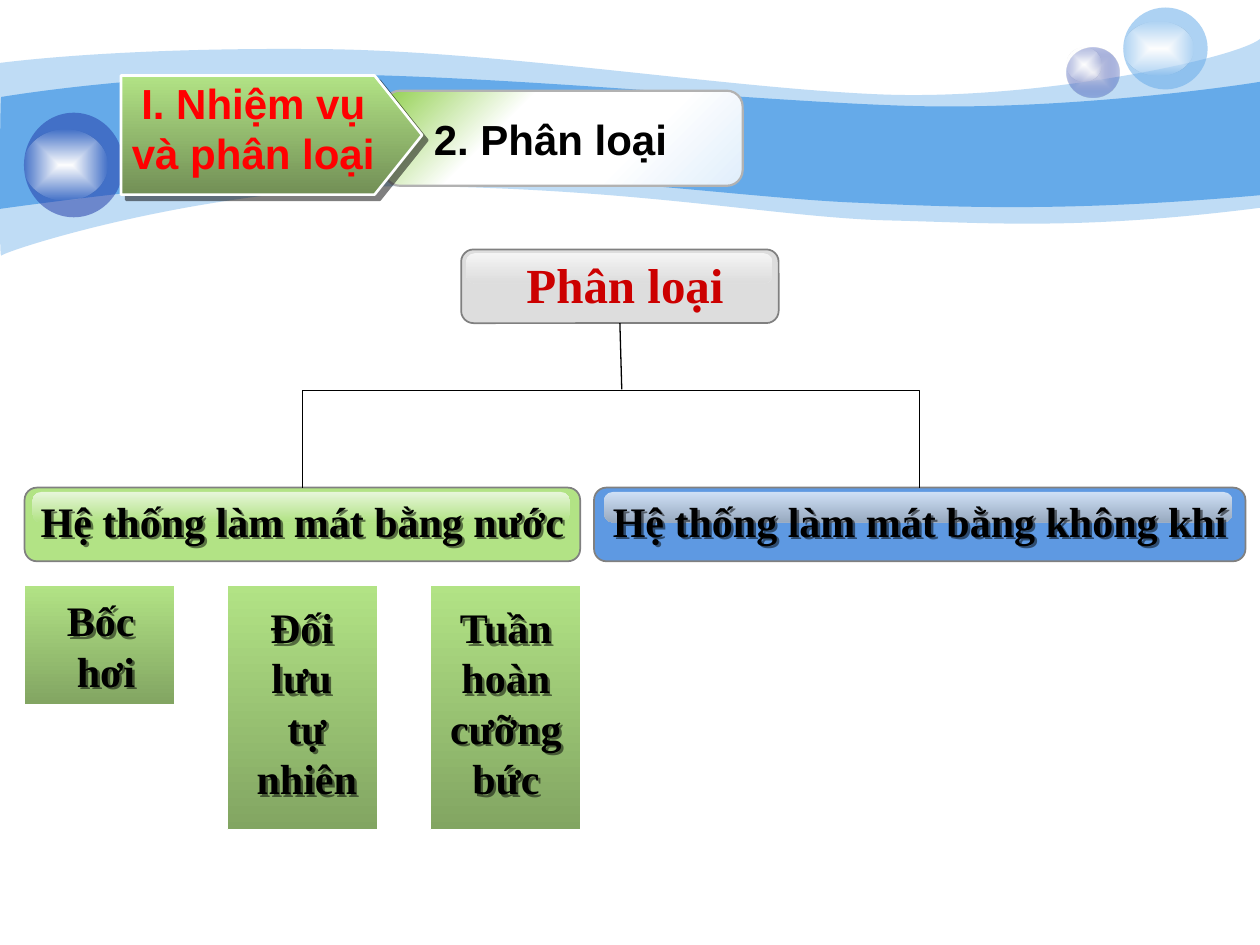
from lxml import etree
from pptx import Presentation
from pptx.dml.color import RGBColor
from pptx.enum.shapes import MSO_CONNECTOR, MSO_SHAPE
from pptx.enum.text import PP_ALIGN
from pptx.oxml import parse_xml
from pptx.oxml.ns import nsdecls, qn
from pptx.util import Emu, Inches, Pt

CELL = Inches(0.1)
OVAL, RECT = MSO_SHAPE.OVAL, MSO_SHAPE.RECTANGLE
ROUND, PENTAGON = MSO_SHAPE.ROUNDED_RECTANGLE, MSO_SHAPE.PENTAGON
STRAIGHT, ELBOW = MSO_CONNECTOR.STRAIGHT, MSO_CONNECTOR.ELBOW
LEFT, CENTER = PP_ALIGN.LEFT, PP_ALIGN.CENTER
TOP, BOTTOM = 0, 2
SANS, SERIF = "Arial", "Times New Roman"
GREEN, SKY, NAVY, WHITE, GREY = "B2E385", "65AAE9", "233DA9", "FFFFFF", "808080"
LEAF = [(0, GREEN, 100), (100, "82A562", 100)]
GLOW = [(0, WHITE, 100), (100, WHITE, 0)]

PALE_WAVE = [(0, 5), [
    [(2.4, 4.7), (10.7, 3.8), (24.7, 3.9)], [(38.6, 3.9), (57.5, 7), (69.9, 7.5)],
    [(82.2, 8), (98, 4.7), (100, 3.1)], [(100, 16.5)],
    [(85.8, 18.3), (78.7, 17.7), (70.5, 17.5)], [(62.2, 17.3), (51.5, 15.1), (34.3, 14.8)],
    [(17.2, 14.4), (0.4, 19.9), (0.1, 20.3)], [(-0.1, 20.8), (0, 7.5), (0, 5)]]]
DEEP_WAVE = [(0.1, 7.7), [
    [(0.2, 7.7), (11, 5.8), (24.8, 5.9)], [(38.6, 5.9), (59.5, 8), (71.8, 8.4)],
    [(84.1, 8.8), (97.6, 6.9), (100, 6.5)], [(100, 15.5)],
    [(85.3, 16.8), (76.5, 16.5), (68.2, 16.1)], [(59.9, 15.8), (44.7, 13.6), (31.7, 13.8)],
    [(20.3, 13.7), (-0.2, 16.6), (-0.1, 16.6)], [(0, 16.6), (0, 7.7), (0.1, 7.7)]]]


def cells(*values):
    return [Emu(round(value * CELL)) for value in values]


def ink(fill, colour, alpha=100):
    fill.solid()
    fill.fore_color.rgb = RGBColor.from_string(colour)
    if alpha < 100:
        for node in fill._xPr.iter(qn("a:srgbClr")):
            etree.SubElement(node, qn("a:alpha")).set("val", str(alpha * 1000))


def blend(shape, stops, angle=None):
    marks = "".join(
        f'<a:gs pos="{spot * 1000}"><a:srgbClr val="{colour}">'
        f'<a:alpha val="{alpha * 1000}"/></a:srgbClr></a:gs>'
        for spot, colour, alpha in stops)
    if angle is None:
        course = ('<a:path path="shape"><a:fillToRect l="50000" t="50000" '
                  'r="50000" b="50000"/></a:path>')
    else:
        course = f'<a:lin ang="{angle * 60000}" scaled="0"/>'
    shape.fill.background()
    blank = shape._element.spPr.find(qn("a:noFill"))
    blank.getparent().replace(blank, parse_xml(
        f'<a:gradFill {nsdecls("a")} rotWithShape="1"><a:gsLst>{marks}</a:gsLst>'
        f'{course}</a:gradFill>'))


def cast_shadow(shape, distance):
    shape.shadow.inherit = False
    shape._element.spPr.find(qn("a:effectLst")).append(parse_xml(
        f'<a:outerShdw {nsdecls("a")} dist="{Pt(distance)}" dir="2700000" algn="ctr" '
        'rotWithShape="0"><a:srgbClr val="000000"><a:alpha val="50000"/>'
        '</a:srgbClr></a:outerShdw>'))


def add_wave(page, outline, colour, alpha=100):
    start, pieces = outline
    builder = page.shapes.build_freeform(*cells(*start))
    builder.add_line_segments([cells(*knot) for piece in pieces for knot in piece], close=True)
    wave = builder.convert_to_shape()
    segments = iter(list(wave._element.iter(qn("a:lnTo"))))
    for piece in pieces:
        first, *others = [next(segments) for knot in piece]
        if others:
            first.tag = qn("a:cubicBezTo")
            for other in others:
                first.append(other[0])
                other.getparent().remove(other)
    wave.shadow.inherit = False
    wave.line.fill.background()
    ink(wave.fill, colour, alpha)


def add_block(page, kind, place, line=None, width=1, bend=None):
    block = page.shapes.add_shape(kind, *cells(*place))
    block.shadow.inherit = False
    if bend is not None:
        block.adjustments[0] = bend
    if line:
        ink(block.line.fill, line)
        block.line.width = Pt(width)
    else:
        block.line.fill.background()
    return block


def add_bubble(page, place, glow_place, colour=None, stops=None):
    ball = add_block(page, OVAL, place)
    if stops:
        blend(ball, stops)
    else:
        ink(ball.fill, colour, 53)
    blend(add_block(page, OVAL, glow_place), GLOW)


def add_plate(page, place, gloss_place, colour, gloss):
    plate = add_block(page, ROUND, place, GREY, bend=0.167)
    ink(plate.fill, colour)
    shine = add_block(page, ROUND, gloss_place, bend=0.284)
    blend(shine, [(0, WHITE, 70), (100, gloss, 70)], 90)
    return plate


def add_label(page, place, lines, size=24, font=SERIF, colour="000000",
              align=CENTER, spacing=None, shadow=False):
    box = page.shapes.add_textbox(*cells(*place))
    box.text_frame.word_wrap = True
    if shadow:
        cast_shadow(box, 2)
    for index, words in enumerate(lines):
        para = box.text_frame.paragraphs[0] if index == 0 else box.text_frame.add_paragraph()
        para.alignment = align
        if spacing:
            para.line_spacing = spacing
        span = para.add_run()
        span.text = words
        span.font.size, span.font.name, span.font.bold = Pt(size), font, True
        ink(span.font.fill, colour)


def add_link(page, kind, start, end):
    link = page.shapes.add_connector(kind, *cells(*start, *end))
    ink(link.line.fill, "000000")
    link.line.width = Pt(0.75)
    etree.SubElement(link._element.spPr, qn("a:effectLst"))
    if kind == ELBOW:
        link._element.spPr.find(qn("a:prstGeom")).set("prst", "bentConnector2")
    return link


def add_backdrop(page):
    add_wave(page, PALE_WAVE, SKY, 41)
    add_wave(page, DEEP_WAVE, SKY)
    add_bubble(page, (84.65, 3.75, 4.2, 4), (84.65, 3.75, 2.8, 2.7),
               stops=[(0, "E1E2ED", 100), (100, NAVY, 31)])
    add_bubble(page, (89.15, 0.6, 6.7, 6.5), (89.15, 1.7, 5.6, 4.3), SKY)
    add_bubble(page, (1.9, 8.95, 7.9, 8.3), (1.9, 10.3, 6.6, 5.6), NAVY)


def add_heading(page):
    panel = add_block(page, ROUND, (30.5, 7.2, 28.45, 7.55), "B2B2B2", 1.25, 0.167)
    blend(panel, [(0, "92D050", 100), (34, WHITE, 100), (67, WHITE, 100),
                  (100, "E0EEFB", 100)], 45)
    arrow = add_block(page, PENTAGON, (9.6, 6, 23.9, 9.45), "FEFFFF", 1.5, 0.399)
    blend(arrow, [(0, GREEN, 100), (100, "728F56", 100)], 90)
    cast_shadow(arrow, 4.2)
    add_label(page, (9.2, 5.65, 21.8, 9.1), ["I. Nhiệm vụ và phân loại"],
              font=SANS, colour="FF0000")
    add_label(page, (33.45, 9.6, 27, 3.9), ["2. Phân loại"],
              font=SANS, align=LEFT, spacing=0.7)


def add_tree(page):
    root = add_plate(page, (36.6, 19.8, 25.2, 5.85), (37, 20.1, 24.3, 2.4), "DDDDDD", "DDDDDD")
    add_label(page, (37, 19.7, 25.2, 5.7), ["Phân loại"], 28, colour="CC0000")
    trunk = add_link(page, STRAIGHT, (49.2, 25.65), (49.35, 30.9))
    trunk.begin_connect(root, BOTTOM)
    branches = [
        (1.95, 44.1, 2.6, 42.6, GREEN, GREEN, "Hệ thống làm mát bằng nước"),
        (47.15, 51.7, 47.95, 49.85, "5E99E2", "B2B2B2", "Hệ thống làm mát bằng không khí")]
    for left, width, shine_left, shine_width, colour, gloss, words in branches:
        plate = add_plate(page, (left, 38.7, width, 5.85),
                          (shine_left, 39.05, shine_width, 2.4), colour, gloss)
        branch = add_link(page, ELBOW, (49.3, 31), (left + width / 2, 38.7))
        branch.end_connect(plate, TOP)
        add_label(page, (left, 38.8, width, 5), [words], shadow=True)
    leaves = [
        (9.45, (3.85, 46.7, 8.3, 9.1), ["Bốc", " hơi"]),
        (19.4, (18.75, 47.25, 11.2, 17.2), ["Đối ", "lưu ", "tự nhiên"]),
        (19.4, (33, 47.25, 14.3, 17.2), ["Tuần hoàn cưỡng bức"])]
    for column, (height, place, lines) in enumerate(leaves):
        leaf = add_block(page, RECT, (1.95 + 16.1 * column, 46.45, 11.9, height), WHITE, 0.75)
        blend(leaf, LEAF, 90)
        add_label(page, place, lines, shadow=True)


def main():
    deck = Presentation()
    deck.slide_width, deck.slide_height = cells(100, 75)
    page = deck.slides.add_slide(deck.slide_layouts[6])
    add_backdrop(page)
    add_heading(page)
    add_tree(page)
    deck.save("out.pptx")


if __name__ == "__main__":
    main()
